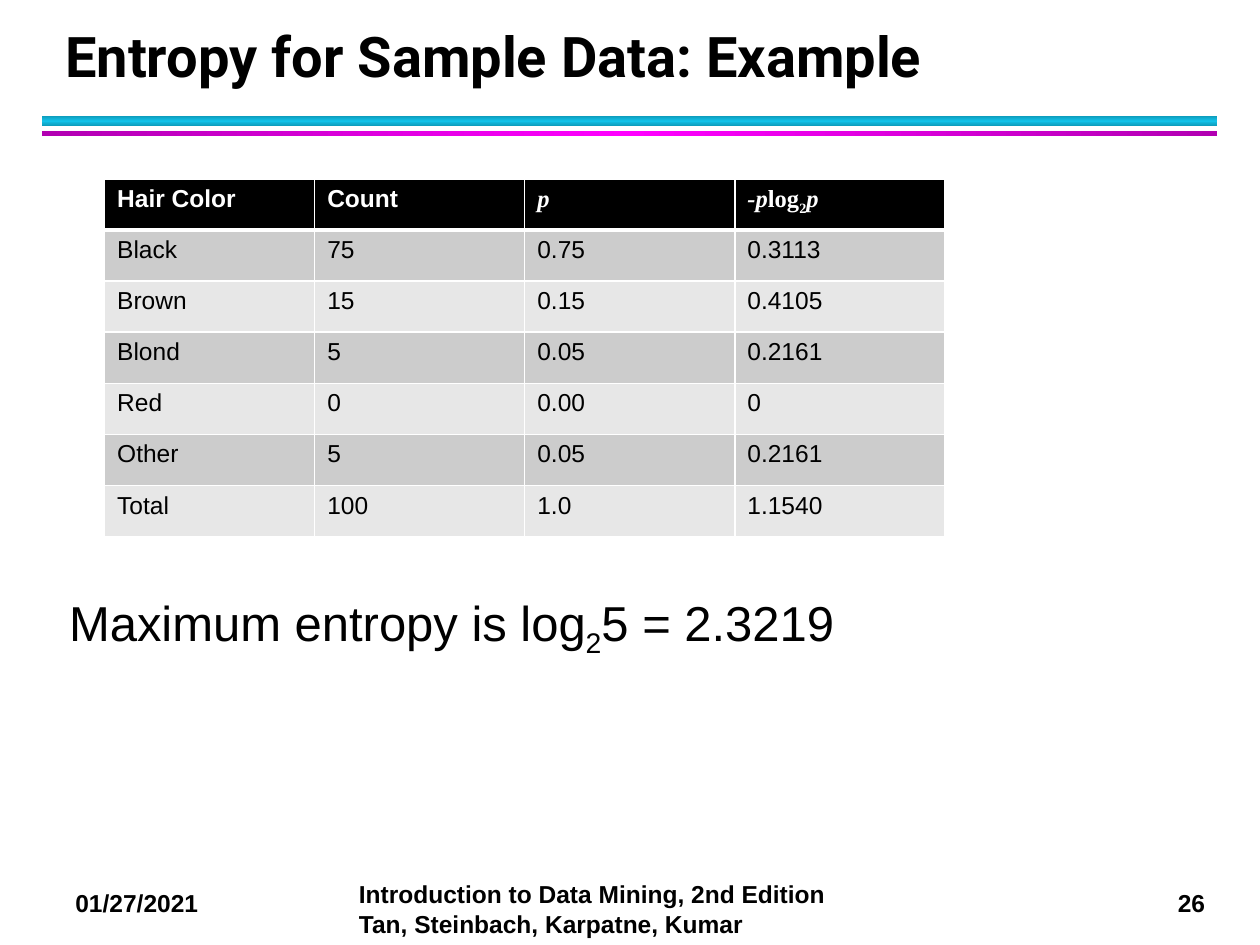
import copy
from dataclasses import dataclass

import lxml.etree
import pptx
import pptx.dml.color
import pptx.enum.shapes
import pptx.enum.text
import pptx.oxml.ns
import pptx.util

Inches = pptx.util.Inches
Pt = pptx.util.Pt
Anchor = pptx.enum.text.MSO_ANCHOR
qn = pptx.oxml.ns.qn


@dataclass(frozen=True)
class Theme:
    """Colours, fonts and type sizes of the slide."""
    black: str = "000000"
    white: str = "FFFFFF"
    bands: tuple = ("CCCCCC", "E7E7E7")
    cyan: tuple = ("0E9BBA", "12C2E9", "0E9BBA")
    pink: tuple = ("B200B2", "FF00FF", "B200B2")
    head: str = "Roboto"
    sans: str = "Arial"
    serif: str = "Times New Roman"
    title: int = 32
    body: int = 28
    small: int = 14


THEME = Theme()
HEADS = [
    [("Hair Color", "")],
    [("Count", "")],
    [("p", "i")],
    [("-p", "i"), ("log", ""), ("2", "s"), ("p", "i")],
]
ROWS = [
    ("Black", "75", "0.75", "0.3113"),
    ("Brown", "15", "0.15", "0.4105"),
    ("Blond", "5", "0.05", "0.2161"),
    ("Red", "0", "0.00", "0"),
    ("Other", "5", "0.05", "0.2161"),
    ("Total", "100", "1.0", "1.1540"),
]


def rgb(code):
    """Turn a hex code into a colour."""
    return pptx.dml.color.RGBColor.from_string(code)


def write(para, parts, size, font=THEME.sans, color=THEME.black, bold=False):
    """Add runs to a paragraph; flag i is italic, s is subscript."""
    for text, flag in parts:
        run = para.add_run()
        run.text = text
        run.font.size = Pt(size)
        run.font.name = font
        run.font.bold = bold
        run.font.italic = flag == "i"
        run.font.color.rgb = rgb(color)
        if flag == "s":
            run.font._element.set("baseline", "-25000")


def add_text(slide, box, parts, size, anchor=Anchor.TOP, wrap=True, **style):
    """Place a text box and return its paragraph."""
    frame = slide.shapes.add_textbox(*map(Inches, box)).text_frame
    frame.word_wrap = wrap
    frame.vertical_anchor = anchor
    para = frame.paragraphs[0]
    write(para, parts, size, **style)
    return para


def add_bar(slide, box, colors, angle):
    """Draw a bar with a gradient of three stops."""
    kind = pptx.enum.shapes.MSO_SHAPE.RECTANGLE
    bar = slide.shapes.add_shape(kind, *map(Inches, box))
    bar.shadow.inherit = False
    bar.line.fill.background()
    bar.fill.gradient()
    bar.fill.gradient_angle = angle
    first = bar.fill.gradient_stops[0]._gs
    first.addnext(copy.deepcopy(first))
    for index, (stop, color) in enumerate(zip(bar.fill.gradient_stops, colors)):
        stop.position = index / 2
        stop.color.rgb = rgb(color)


def add_header(slide, box):
    """Place the title and the two bars under it."""
    left, top, width = box
    para = add_text(slide, (left + 0.09, top, width - 0.27, 0.58),
                    [("Entropy for Sample Data: Example", "")], THEME.title,
                    Anchor.BOTTOM, font=THEME.head, bold=True)
    para.line_spacing = Pt(36)
    add_bar(slide, (left, top + 0.75, width, 0.08), THEME.cyan, 90)
    add_bar(slide, (left, top + 0.87, width, 0.04), THEME.pink, 0)


def set_edges(cell, top, base):
    """Draw white cell borders, with the given top and bottom widths."""
    props = cell._tc.get_or_add_tcPr()
    for tag, width in (("L", 1), ("R", 1), ("T", top), ("B", base)):
        line = lxml.etree.SubElement(props, qn("a:ln" + tag), w=str(Pt(width)))
        fill = lxml.etree.SubElement(line, qn("a:solidFill"))
        lxml.etree.SubElement(fill, qn("a:srgbClr"), val=THEME.white)


def add_grid(slide, box):
    """Fill the table of hair colours."""
    rows = [HEADS] + [[[(text, "")] for text in row] for row in ROWS]
    grid = slide.shapes.add_table(len(rows), len(HEADS), *map(Inches, box)).table
    for r, row in enumerate(rows):
        for c, parts in enumerate(row):
            cell = grid.cell(r, c)
            head = r == 0
            set_edges(cell, 3 if r == 1 else 1, 3 if head else 1)
            cell.fill.solid()
            cell.fill.fore_color.rgb = rgb(
                THEME.black if head else THEME.bands[(r - 1) % 2])
            write(cell.text_frame.paragraphs[0], parts, THEME.small,
                  THEME.serif if head and c > 1 else THEME.sans,
                  THEME.white if head else THEME.black, head)


def add_note(slide, box):
    """Place the line on maximum entropy."""
    parts = [("Maximum entropy is log", ""), ("2", "s"), ("5 = 2.3219", "")]
    add_text(slide, box, parts, THEME.body)


def add_footer(slide, box):
    """Place the date, the book and the page number."""
    left, top, width, height = box
    book = ("Introduction to Data Mining, 2nd Edition "
            "Tan, Steinbach, Karpatne, Kumar")
    items = [
        ("01/27/2021", (left, top + 0.07, 1.33, 0.34), True),
        (book, (left + 2.25, top, 4.08, height), True),
        ("26", (left + width - 0.44, top + 0.07, 0.44, 0.34), False),
    ]
    for text, area, wrap in items:
        add_text(slide, area, [(text, "")], THEME.small, wrap=wrap, bold=True)


def main():
    """Build the slide and save it."""
    deck = pptx.Presentation()
    deck.slide_width, deck.slide_height = Inches(10), Inches(7.5)
    slide = deck.slides.add_slide(deck.slide_layouts[6])
    add_header(slide, (0.33, 0.17, 9.33))
    add_footer(slide, (0.5, 6.93, 9.19, 0.57))
    add_note(slide, (0.45, 4.65, 9.1, 2.27))
    add_grid(slide, (0.83, 1.42, 6.67, 2.84))
    deck.save("out.pptx")


if __name__ == "__main__":
    main()
